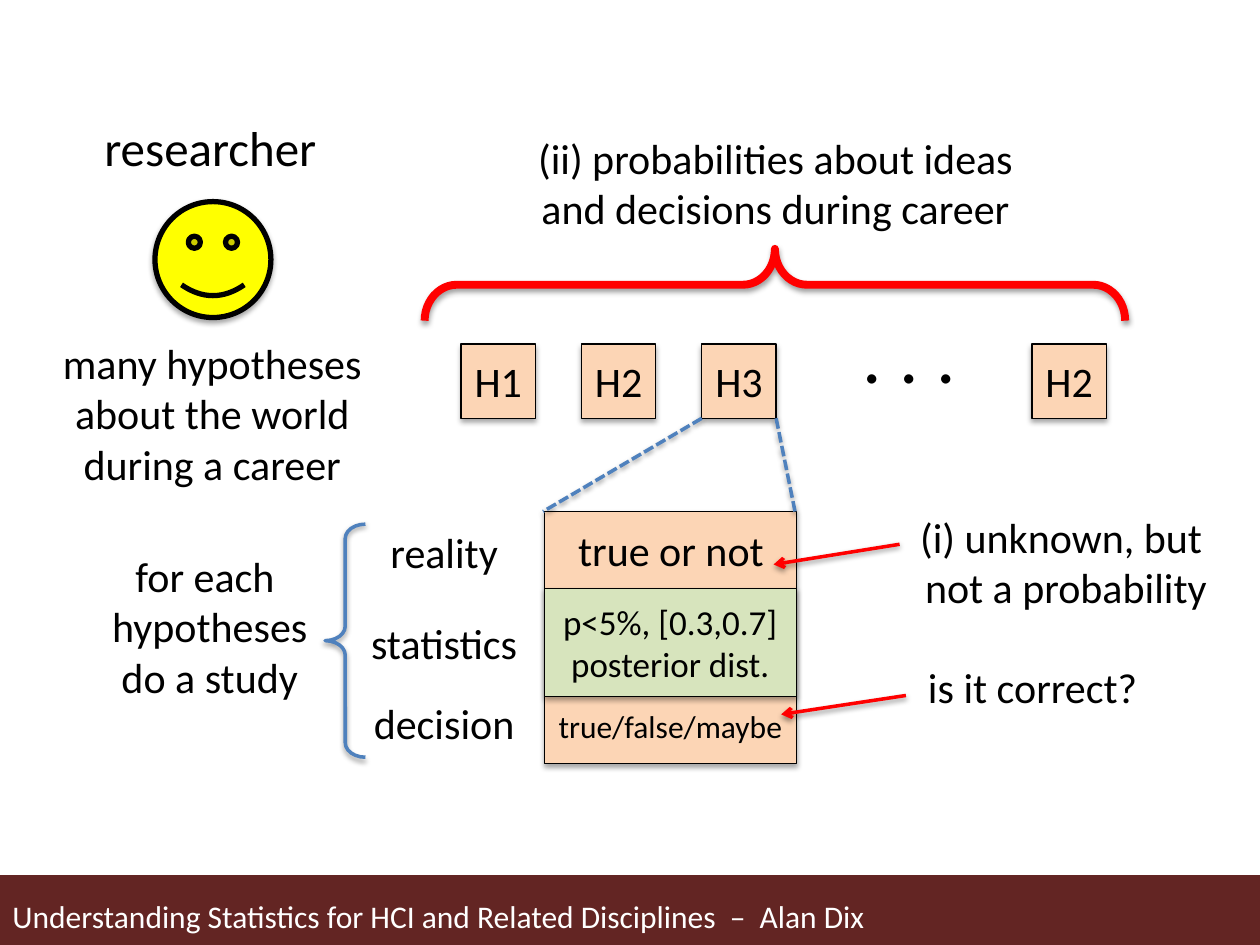
from dataclasses import dataclass

from lxml.etree import SubElement
from pptx import Presentation
from pptx.dml.color import RGBColor
from pptx.enum.dml import MSO_LINE
from pptx.enum.shapes import MSO_CONNECTOR, MSO_SHAPE
from pptx.enum.text import MSO_ANCHOR, MSO_AUTO_SIZE, PP_ALIGN
from pptx.oxml.ns import qn
from pptx.util import Inches, Pt

BLACK = RGBColor(0x00, 0x00, 0x00)
WHITE = RGBColor(0xFF, 0xFF, 0xFF)
MAROON = RGBColor(0x63, 0x25, 0x23)
YELLOW = RGBColor(0xFF, 0xFF, 0x00)
PEACH = RGBColor(0xFC, 0xD5, 0xB5)
GREEN = RGBColor(0xD7, 0xE4, 0xBD)
RED = RGBColor(0xFF, 0x00, 0x00)
BLUE = RGBColor(0x4F, 0x81, 0xBD)
FONT = "Calibri"
COLUMNS, ROWS = 100, 75
CELL = Inches(0.1)


@dataclass
class Box:
    """A rectangle measured in grid columns and rows."""

    left: float
    top: float
    width: float
    height: float

    def inside(self, left, top, width, height):
        """Return a box placed relative to this one."""
        return Box(self.left + left, self.top + top, width, height)

    def point(self, column, row):
        """Return a position in this box as slide lengths."""
        return int((self.left + column) * CELL), int((self.top + row) * CELL)

    def frame(self):
        """Return left, top, width and height as slide lengths."""
        return [int(side * CELL) for side in (self.left, self.top, self.width, self.height)]

    def turned(self):
        """Return the box that fills this one after a quarter turn."""
        shift = (self.width - self.height) / 2
        return self.inside(shift, -shift, self.height, self.width)


def add_shadow(item, alpha, distance):
    """Give a shape or connector a soft shadow straight below."""
    effects = SubElement(item._element.spPr, qn("a:effectLst"))
    shadow = SubElement(effects, qn("a:outerShdw"), blurRad=str(Pt(3.1)),
                        dist=str(Pt(distance)), dir="5400000", rotWithShape="0")
    color = SubElement(shadow, qn("a:srgbClr"), val=str(BLACK))
    SubElement(color, qn("a:alpha"), val=str(alpha * 1000))


def write(frame, text, size, color=BLACK, align=PP_ALIGN.CENTER):
    """Write one paragraph, with line breaks, into a text frame."""
    frame.word_wrap = False
    para = frame.paragraphs[0]
    para.text = text
    para.alignment = align
    for span in para.runs:
        span.font.name = FONT
        span.font.size = Pt(size)
        span.font.color.rgb = color


def add_label(page, box, text, size=24, color=BLACK, align=PP_ALIGN.CENTER):
    """Add a text box."""
    frame = page.shapes.add_textbox(*box.frame()).text_frame
    frame.auto_size = MSO_AUTO_SIZE.SHAPE_TO_FIT_TEXT
    write(frame, text, size, color, align)


def add_block(page, box, fill, text="", size=24, kind=MSO_SHAPE.RECTANGLE, weight=0.75):
    """Add a filled, outlined and shadowed shape."""
    block = page.shapes.add_shape(kind, *box.frame())
    block.fill.solid()
    block.fill.fore_color.rgb = fill
    block.line.color.rgb = BLACK
    block.line.width = Pt(weight)
    add_shadow(block, 35, 1.8)
    if text:
        block.text_frame.vertical_anchor = MSO_ANCHOR.MIDDLE
        write(block.text_frame, text, size)


def add_brace(page, box, color, weight, curve, rotation=0):
    """Add a left brace."""
    brace = page.shapes.add_shape(MSO_SHAPE.LEFT_BRACE, *box.frame())
    brace.adjustments[0] = curve
    brace.rotation = rotation
    brace.fill.background()
    brace.line.color.rgb = color
    brace.line.width = Pt(weight)
    add_shadow(brace, 38, 1.6)


def add_line(page, start, end, color, dashed=False, arrow=False):
    """Add a straight connector between two positions."""
    line = page.shapes.add_connector(MSO_CONNECTOR.STRAIGHT, *start, *end)
    line.line.color.rgb = color
    line.line.width = Pt(2)
    if dashed:
        line.line.dash_style = MSO_LINE.SQUARE_DOT
    if arrow:
        SubElement(line.line._get_or_add_ln(), qn("a:tailEnd"), type="arrow")
    add_shadow(line, 38, 1.6)


def draw_footer(page, box):
    """Draw the title band at the bottom."""
    band = page.shapes.add_shape(MSO_SHAPE.RECTANGLE, *box.frame())
    band.shadow.inherit = False
    band.fill.solid()
    band.fill.fore_color.rgb = MAROON
    band.line.color.rgb = MAROON
    band.line.width = Pt(0.75)
    add_label(page, box.inside(0, 1.2, 82.8, 4),
              "Understanding Statistics for HCI and Related Disciplines  –  Alan Dix",
              18, WHITE, PP_ALIGN.LEFT)


def draw_researcher(page, box):
    """Draw the researcher with captions above and below."""
    add_block(page, box.inside(8.5, 7.2, 9.2, 9.2), YELLOW,
              kind=MSO_SHAPE.SMILEY_FACE, weight=3)
    add_label(page, box.inside(3.5, 0, 19.1, 5.7), "researcher", 28, align=PP_ALIGN.LEFT)
    add_label(page, box.inside(0, 17.5, box.width, 13.1),
              "many hypotheses\nabout the world\nduring a career")


def draw_hypotheses(page, box):
    """Draw the row of hypotheses under its brace."""
    side, step = 5.9, 9.55
    lefts = [2.9 + step * index for index in range(3)] + [48.2]
    for left, name in zip(lefts, ("H1", "H2", "H3", "H2")):
        add_block(page, box.inside(left, box.height - side, side, side), PEACH, name)
    add_label(page, box.inside(33.8, 13.8, 9.5, 8.4), ". . .", 44, align=PP_ALIGN.LEFT)
    add_brace(page, box.inside(0, 9.75, box.width, 5.7).turned(), RED, 4.5, 0.447, 90)
    add_label(page, box.inside(7.8, 0, 40.1, 9.1),
              "(ii) probabilities about ideas\nand decisions during career")


def draw_study(page, box):
    """Draw the study of one hypothesis with its three stages."""
    stack = box.inside(box.width - 20, 0, 20, box.height)
    add_block(page, stack, PEACH)
    add_block(page, stack.inside(0, 6.1, stack.width, 8.6), GREEN,
              "p<5%, [0.3,0.7]\nposterior dist.", 20)
    add_label(page, stack.inside(1.6, 0.5, 16.9, 5), "true or not")
    add_label(page, stack.inside(0, 15, stack.width, 4), "true/false/maybe", 18)
    add_label(page, box.inside(0, 2.6, 17.7, 13.1), "for each \nhypotheses\ndo a study")
    add_brace(page, box.inside(18, 1, 3.2, 18.5), BLUE, 2, 0.358)
    for top, stage in ((0.7, "reality"), (7.9, "statistics"), (14.3, "decision")):
        add_label(page, box.inside(20.5, top, 13.9, 5), stage)


def draw_zoom(page, box):
    """Draw the dashed lines that open a hypothesis into its study."""
    for top, bottom in ((12.6, 0), (18.5, box.width)):
        add_line(page, box.point(top, 0), box.point(bottom, box.height), BLUE, dashed=True)


def draw_comments(page, box):
    """Draw the remarks that point at the study."""
    add_label(page, box.inside(10.5, 0, 25.4, 9.1), "(i) unknown, but \nnot a probability")
    add_label(page, box.inside(11.1, 11.9, 18.9, 5), "is it correct?")
    for start, end in (((10, 3.1), (0, 4.7)), ((10.5, 15.1), (0.6, 16.6))):
        add_line(page, box.point(*start), box.point(*end), RED, arrow=True)


def main():
    """Build the slide and save it."""
    deck = Presentation()
    deck.slide_width = COLUMNS * CELL
    deck.slide_height = ROWS * CELL
    page = deck.slides.add_slide(deck.slide_layouts[6])
    draw_footer(page, Box(0, ROWS - 5.5, COLUMNS, 5.5))
    draw_researcher(page, Box(3.8, 8.8, 26.1, 30.6))
    draw_hypotheses(page, Box(33.7, 10, 55.6, 23.2))
    draw_study(page, Box(7.8, 40.6, 55.4, 20))
    draw_zoom(page, Box(43.1, 33.2, 20, 7.4))
    draw_comments(page, Box(61.4, 40.1, 35.9, 16.9))
    deck.save("out.pptx")


if __name__ == "__main__":
    main()
